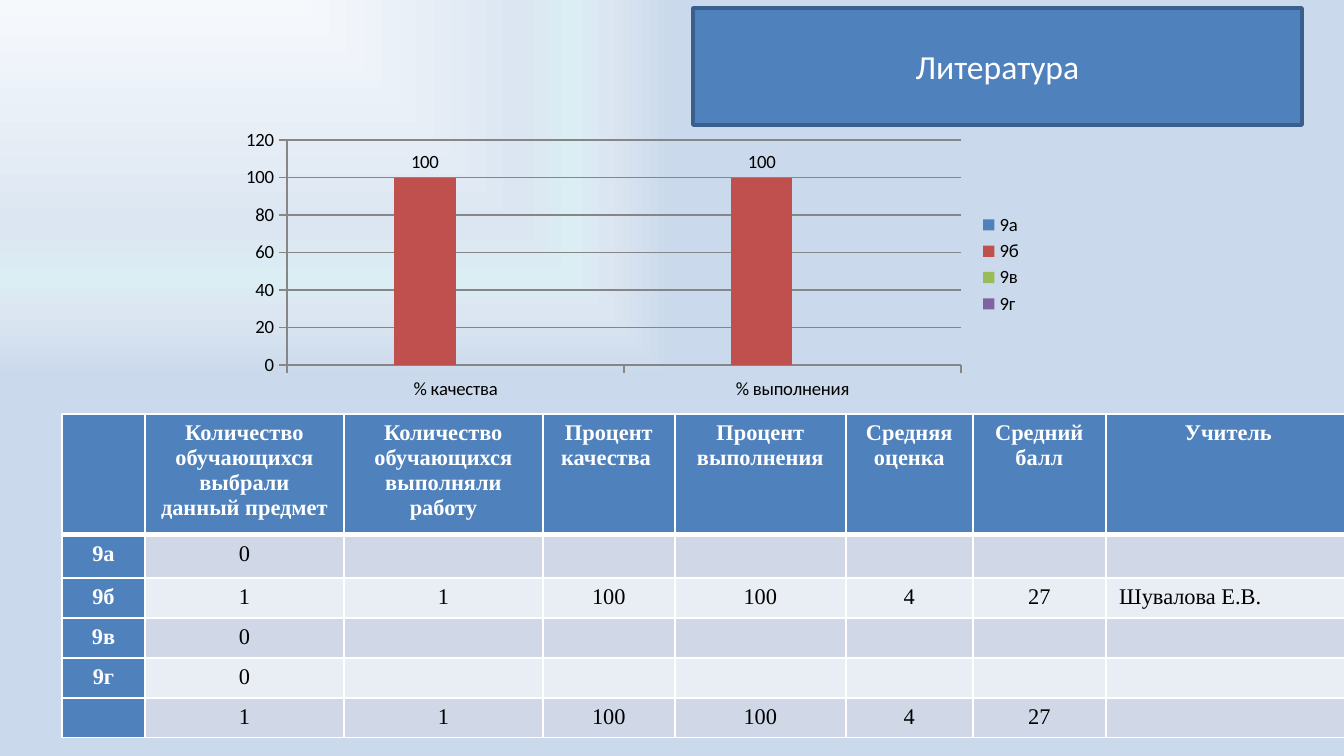
from lxml import etree
from pptx import Presentation
from pptx.chart.data import CategoryChartData
from pptx.dml.color import RGBColor
from pptx.enum.chart import XL_CHART_TYPE, XL_LABEL_POSITION, XL_LEGEND_POSITION, XL_TICK_MARK
from pptx.enum.text import MSO_ANCHOR, PP_ALIGN
from pptx.oxml import parse_xml
from pptx.text.text import Font
from pptx.util import Pt

PX = 914400 / 134.4
CENTER, LEFT = PP_ALIGN.CENTER, PP_ALIGN.LEFT
MIDDLE = MSO_ANCHOR.MIDDLE
OUTSIDE = XL_TICK_MARK.OUTSIDE
COLUMNS = XL_CHART_TYPE.COLUMN_CLUSTERED
LEGEND_RIGHT = XL_LEGEND_POSITION.RIGHT
ABOVE_BAR = XL_LABEL_POSITION.OUTSIDE_END

WHITE = RGBColor(0xFF, 0xFF, 0xFF)
BLACK = RGBColor(0x00, 0x00, 0x00)
BLUE = RGBColor(0x4F, 0x81, 0xBD)
DARK_BLUE = RGBColor(0x3A, 0x5F, 0x8C)
RED = RGBColor(0xC0, 0x50, 0x4D)
GREEN = RGBColor(0x9B, 0xBB, 0x59)
PURPLE = RGBColor(0x80, 0x64, 0xA2)
GRAY = RGBColor(0x86, 0x86, 0x86)
BAND_DARK = RGBColor(0xD0, 0xD8, 0xE8)
BAND_LIGHT = RGBColor(0xE9, 0xED, 0xF4)
BACKGROUND_STOPS = [
    (0, RGBColor(0xF6, 0xF9, 0xFC)),
    (60, RGBColor(0xDC, 0xE6, 0xF2)),
    (74, RGBColor(0xDB, 0xEE, 0xF4)),
    (83, RGBColor(0xDC, 0xE6, 0xF2)),
    (100, RGBColor(0xCA, 0xD9, 0xEB)),
]
A = "http://schemas.openxmlformats.org/drawingml/2006/main"
P = "http://schemas.openxmlformats.org/presentationml/2006/main"


def px(*lengths):
    return [round(length * PX) for length in lengths]


def write(frame, text, font="Times New Roman", size=12, color=BLACK, bold=False, align=CENTER):
    paragraph = frame.paragraphs[0]
    paragraph.alignment = align
    if text:
        run = paragraph.add_run()
        run.text = text
        style = run.font
    else:
        style = Font(paragraph._p.get_or_add_endParaRPr())
    style.name, style.size, style.bold = font, Pt(size), bold
    style.color.rgb = color


prs = Presentation()
prs.slide_width, prs.slide_height = px(1344, 756)
slide = prs.slides.add_slide(prs.slide_layouts[5])

stops = "".join(
    f'<a:gs pos="{position * 1000}"><a:srgbClr val="{color}"/></a:gs>'
    for position, color in BACKGROUND_STOPS
)
background = parse_xml(
    f'<p:bg xmlns:p="{P}" xmlns:a="{A}"><p:bgPr><a:gradFill rotWithShape="1">'
    f'<a:gsLst>{stops}</a:gsLst><a:path path="rect">'
    '<a:fillToRect r="100000" b="100000"/></a:path></a:gradFill>'
    "<a:effectLst/></p:bgPr></p:bg>"
)
slide.element.cSld.insert(0, background)

title = slide.shapes.title
title.left, title.top, title.width, title.height = px(693, 8, 609, 117)
title.fill.solid()
title.fill.fore_color.rgb = BLUE
title.line.color.rgb = DARK_BLUE
title.line.width = Pt(2)
title.text_frame.vertical_anchor = MIDDLE
write(title.text_frame, "Литература", font="Calibri", size=18, color=WHITE)

results = CategoryChartData()
results.categories = ["% качества", "% выполнения"]
for name, values in [("9а", [None, None]), ("9б", [100, 100]), ("9в", [None, None]), ("9г", [None, None])]:
    results.add_series(name, values)
chart = slide.shapes.add_chart(COLUMNS, *px(230, 124, 806, 281), results).chart
chart.has_title = False
chart.font.name, chart.font.size = "Calibri", Pt(10)
chart.font.color.rgb = BLACK
chart.has_legend = True
chart.legend.position = LEGEND_RIGHT
chart.legend.include_in_layout = False
for axis in (chart.category_axis, chart.value_axis):
    axis.major_tick_mark = OUTSIDE
    axis.format.line.color.rgb = GRAY
    axis.format.line.width = Pt(0.75)
scale = chart.value_axis
scale.minimum_scale, scale.maximum_scale, scale.major_unit = 0, 120, 20
scale.has_major_gridlines = True
scale.major_gridlines.format.line.color.rgb = GRAY
scale.major_gridlines.format.line.width = Pt(0.75)
bars = chart.plots[0]
bars.gap_width = 150
bars.vary_by_categories = False
for series, color in zip(bars.series, [BLUE, RED, GREEN, PURPLE]):
    series.format.fill.solid()
    series.format.fill.fore_color.rgb = color
    if series.name != "9г":
        series.data_labels.show_value = True
        series.data_labels.position = ABOVE_BAR

rows = [
    ["", "Количество обучающихся выбрали данный предмет",
     "Количество обучающихся выполняли работу", "Процент качества ",
     "Процент выполнения", "Средняя оценка", "Средний балл", "Учитель"],
    ["9а", "0", "", "", "", "", "", ""],
    ["9б", "1", "1", "100", "100", "4", "27", "Шувалова Е.В."],
    ["9в", "0", "", "", "", "", "", ""],
    ["9г", "0", "", "", "", "", "", ""],
    ["", "1", "1", "100", "100", "4", "27", ""],
]
column_widths = px(83, 199, 199, 132, 171, 127, 133, 245)
row_heights = px(121, 43, 40, 40, 40, 40)
table = slide.shapes.add_table(
    len(rows), len(column_widths), *px(62, 414), sum(column_widths), sum(row_heights)
).table
for column, width in zip(table.columns, column_widths):
    column.width = width
for row, height in zip(table.rows, row_heights):
    row.height = height

for r, texts in enumerate(rows):
    for c, text in enumerate(texts):
        cell = table.cell(r, c)
        heading = r == 0 or c == 0
        for side in "LRTB":
            thick = (r == 0 and side == "B") or (r == 1 and side == "T")
            border = etree.SubElement(cell._tc.get_or_add_tcPr(), f"{{{A}}}ln{side}", w=str(Pt(3 if thick else 1)))
            paint = etree.SubElement(border, f"{{{A}}}solidFill")
            etree.SubElement(paint, f"{{{A}}}srgbClr", val=str(WHITE))
        cell.fill.solid()
        cell.fill.fore_color.rgb = BLUE if heading else BAND_DARK if r % 2 else BAND_LIGHT
        write(
            cell.text_frame, text, color=WHITE if heading else BLACK, bold=heading,
            align=LEFT if c == 7 and r else CENTER,
        )

prs.save("out.pptx")
